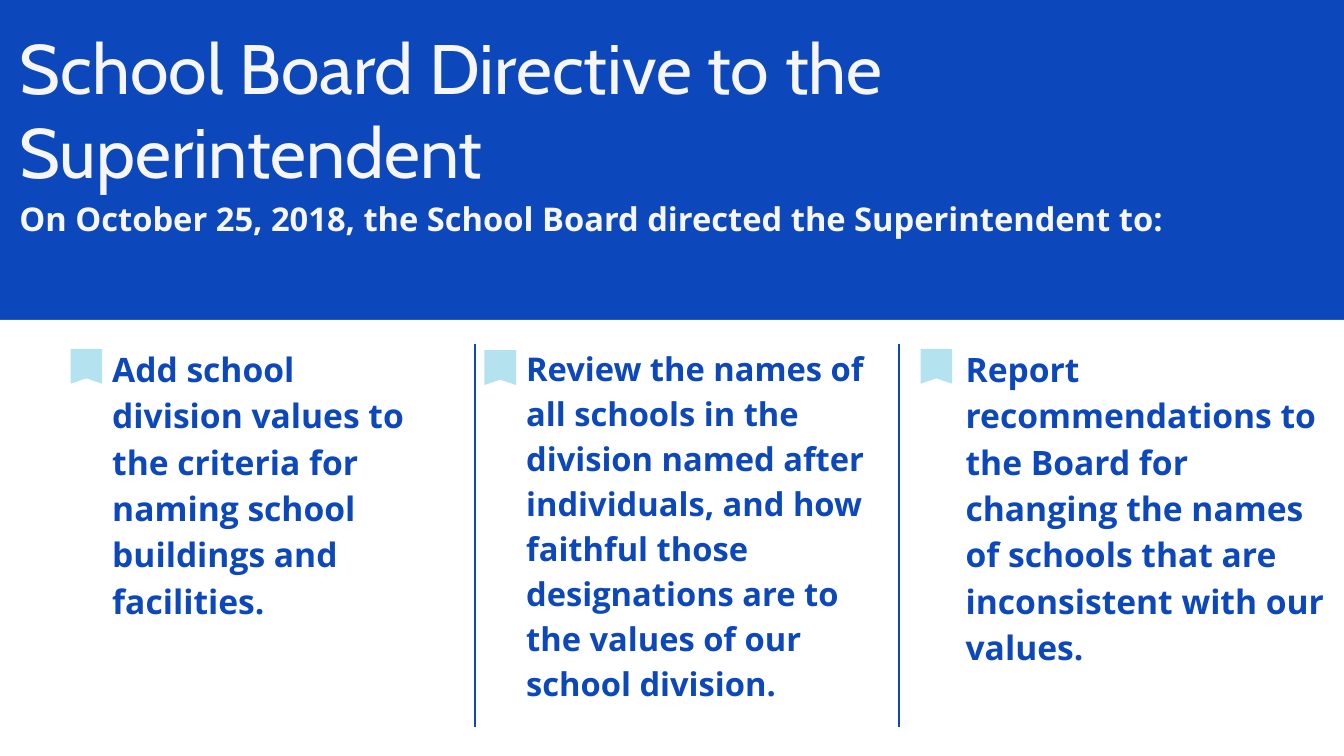
from dataclasses import dataclass

from lxml import etree
from pptx import Presentation
from pptx.dml.color import RGBColor
from pptx.enum.shapes import MSO_CONNECTOR, MSO_SHAPE
from pptx.enum.text import MSO_ANCHOR, PP_ALIGN
from pptx.oxml.ns import qn
from pptx.util import Inches, Pt

STRAIGHT = MSO_CONNECTOR.STRAIGHT
RECTANGLE = MSO_SHAPE.RECTANGLE
TOP = MSO_ANCHOR.TOP
LEFT = PP_ALIGN.LEFT


@dataclass(frozen=True)
class Theme:
    blue: RGBColor = RGBColor.from_string("0C48BB")
    white: RGBColor = RGBColor.from_string("FFFFFF")
    off_white: RGBColor = RGBColor.from_string("F6F6F6")
    ribbon: RGBColor = RGBColor.from_string("B4E3EF")
    title_font: str = "Cabin"
    body_font: str = "Open Sans"
    title_size: int = 75
    lead_size: int = 35
    body_size: int = 36
    compact_size: int = 35
    leading: float = 1.15
    rule_width: float = 1.5


def paint(sp, color):
    sp.shadow.inherit = False
    sp.fill.solid()
    sp.fill.fore_color.rgb = color
    sp.line.fill.background()


def add_text(box, paragraphs):
    tf = slide.shapes.add_textbox(*box).text_frame
    tf.word_wrap = True
    tf.vertical_anchor = TOP
    tf.margin_left = tf.margin_top = tf.margin_right = tf.margin_bottom = 0
    for i, (text, font, size, bold, color, leading) in enumerate(paragraphs):
        p = tf.paragraphs[0] if i == 0 else tf.add_paragraph()
        p.text = text
        p.alignment = LEFT
        p.line_spacing = leading
        p.font.name = font
        p.font.size = Pt(size)
        p.font.bold = bold
        p.font.color.rgb = color


theme = Theme()
prs = Presentation()
prs.slide_width = Inches(20)
prs.slide_height = Inches(11.25)
slide = prs.slides.add_slide(prs.slide_layouts[6])

W, H = prs.slide_width, prs.slide_height
col, row = W / 20, H / 11.25
header_h = int(4.76 * row)

for top, height, color in [(0, H, theme.blue), (header_h, H - header_h, theme.white)]:
    sp = slide.shapes.add_shape(RECTANGLE, 0, top, W, height)
    paint(sp, color)

for x in (7.07, 13.38):
    rule = slide.shapes.add_connector(
        STRAIGHT, int(x * col), int(5.12 * row), int(x * col), int(10.82 * row)
    )
    rule.line.color.rgb = theme.blue
    rule.line.width = Pt(theme.rule_width)
    etree.SubElement(rule._element.spPr, qn("a:effectLst"))

add_text(
    (int(0.29 * col), int(0.37 * row), int(19.53 * col), int(3.11 * row)),
    [
        ("School Board Directive to the Superintendent",
         theme.title_font, theme.title_size, False, theme.off_white, 1.0),
        ("On October 25, 2018, the School Board directed the Superintendent to:",
         theme.body_font, theme.lead_size, True, theme.off_white, theme.leading),
    ],
)

directives = [
    (1.05, 5.19, 1.67, 4.6, 4.09, theme.body_size,
     "Add school division values to the criteria for naming school buildings and facilities."),
    (7.21, 5.21, 7.83, 5.54, 6.15, theme.compact_size,
     "Review the names of all schools in the division named after individuals, "
     "and how faithful those designations are to the values of our school division."),
    (13.7, 5.19, 14.37, 5.63, 4.79, theme.body_size,
     "Report recommendations to the Board for changing the names of schools "
     "that are inconsistent with our values."),
]
ribbon_w, ribbon_h, notch = 0.47, 0.52, 0.08

for ribbon_x, ribbon_y, text_x, text_w, text_h, size, text in directives:
    outline = [
        (ribbon_x + dx, ribbon_y + dy)
        for dx, dy in [(0, 0), (ribbon_w, 0), (ribbon_w, ribbon_h),
                       (ribbon_w / 2, ribbon_h - notch), (0, ribbon_h)]
    ]
    points = [(int(x * col), int(y * row)) for x, y in outline]
    fb = slide.shapes.build_freeform(*points[0])
    fb.add_line_segments(points[1:], close=True)
    paint(fb.convert_to_shape(), theme.ribbon)
    add_text(
        (int(text_x * col), int(5.1 * row), int(text_w * col), int(text_h * row)),
        [(text, theme.body_font, size, True, theme.blue, theme.leading)],
    )

prs.save("out.pptx")
